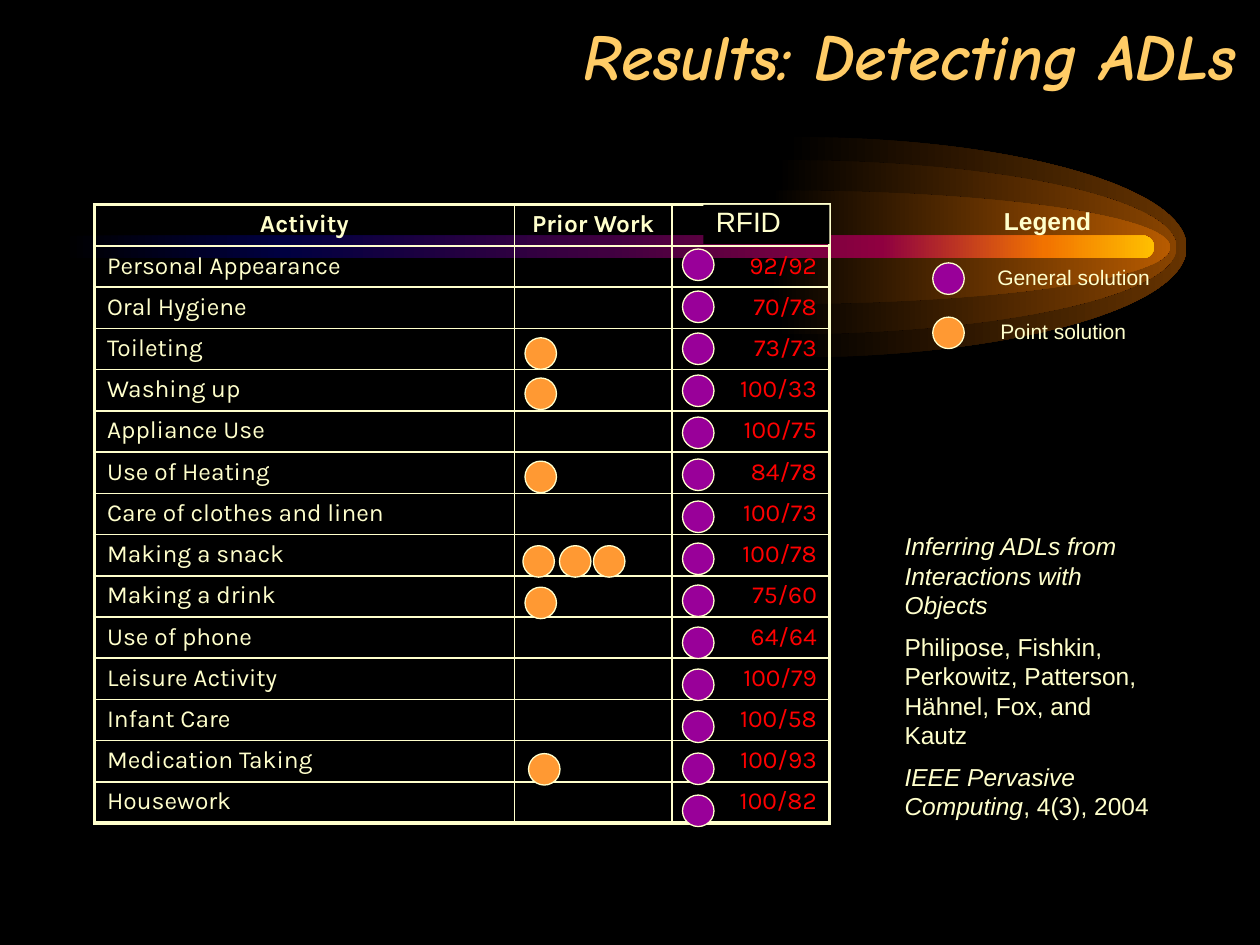
"""Build the slide of results on detecting activities of daily living."""
import dataclasses
from typing import Any, Optional

import lxml.etree
import pptx
import pptx.dml.color
import pptx.enum.shapes
import pptx.enum.text
import pptx.oxml.ns
import pptx.util

Pt = pptx.util.Pt
RGB = pptx.dml.color.RGBColor
qn = pptx.oxml.ns.qn
Align = pptx.enum.text.PP_ALIGN
Anchor = pptx.enum.text.MSO_ANCHOR
Preset = pptx.enum.shapes.MSO_SHAPE

BLACK = RGB(0x00, 0x00, 0x00)
CREAM = RGB(0xFF, 0xFF, 0xCC)
GOLD = RGB(0xFF, 0xCC, 0x66)
RED = RGB(0xFF, 0x00, 0x00)
ORANGE = RGB(0xFF, 0x99, 0x33)
PURPLE = RGB(0x99, 0x00, 0x99)
BEAM = [(0, BLACK), (20, RGB(0x00, 0x00, 0x40)), (50, RGB(0x40, 0x00, 0x40)),
        (75, RGB(0x8F, 0x00, 0x40)), (90, RGB(0xF2, 0x73, 0x00)), (100, RGB(0xFF, 0xBF, 0x00))]

DOT_SIZE = 18
DOT_PITCH = 24
FIRST_DOT_TOP = 142.3
ROW_HEIGHT = 23.58
GLOW_CENTRE_Y = 141.3
GLOW_RADIUS_X = 225.2
GLOW_TAIL = 3.6
ROUNDNESS = 0.55


@dataclasses.dataclass(frozen=True)
class Glow:
    centre_x: float
    radius_y: float
    colour: RGB


@dataclasses.dataclass(frozen=True)
class Style:
    size: float
    font: str = "Arial"
    colour: RGB = CREAM
    bold: bool = False
    italic: bool = False


@dataclasses.dataclass(frozen=True)
class Result:
    activity: str
    score: str


@dataclasses.dataclass(frozen=True)
class Box:
    left: float
    top: float
    width: float
    height: float

    def lengths(self) -> list[int]:
        return [Pt(value) for value in dataclasses.astuple(self)]


GLOWS = [Glow(452.9, 63, RGB(0x66, 0x33, 0x00)),
         Glow(447.1, 49.8, RGB(0x89, 0x44, 0x00)),
         Glow(443.5, 32.5, RGB(0xB7, 0x5B, 0x00))]
RESULTS = [
    Result("Personal Appearance", "92/92"), Result("Oral Hygiene", "70/78"),
    Result("Toileting", "73/73"), Result("Washing up", "100/33"),
    Result("Appliance Use", "100/75"), Result("Use of Heating", "84/78"),
    Result("Care of clothes and linen", "100/73"), Result("Making a snack", "100/78"),
    Result("Making a drink", "75/60"), Result("Use of phone", "64/64"),
    Result("Leisure Activity", "100/79"), Result("Infant Care", "100/58"),
    Result("Medication Taking", "100/93"), Result("Housework", "100/82"),
]
POINT_SOLUTIONS = [(300, 193), (300, 216), (300, 263.5), (298.8, 311.8),
                   (319.7, 311.8), (339.1, 311.8), (300, 335.5), (302, 430.6)]
HEADER = Style(14, "Karla", bold=True)
ACTIVITY = Style(14, "Karla")
SCORE = Style(14, "Karla", RED)
CITATION = Style(14)
WORK_TITLE = Style(14, italic=True)
LEGEND_LABEL = Style(12)


def add_run(paragraph: Any, wording: str, style: Style) -> None:
    """Append one styled run."""
    run = paragraph.add_run()
    run.text = wording
    run.font.name, run.font.size = style.font, Pt(style.size)
    run.font.bold, run.font.italic = style.bold, style.italic
    run.font.color.rgb = style.colour


def add_text(slide: Any, box: Box, paragraphs: list[list[tuple[str, Style]]],
             align: Align = Align.LEFT, anchor: Anchor = Anchor.TOP) -> None:
    """Add a wrapping text box, one list of runs per paragraph."""
    frame = slide.shapes.add_textbox(*box.lengths()).text_frame
    frame.word_wrap, frame.vertical_anchor = True, anchor
    for index, runs in enumerate(paragraphs):
        paragraph = frame.add_paragraph() if index else frame.paragraphs[0]
        paragraph.alignment = align
        paragraph.space_before = Pt(7 if index else 0)
        for wording, style in runs:
            add_run(paragraph, wording, style)


def fill_gradient(shape: Any, stops: list[tuple[int, RGB]]) -> None:
    """Give a shape a left-to-right gradient and no outline."""
    shape.shadow.inherit = False
    shape.line.fill.background()
    shape.fill.gradient()
    shape.fill.gradient_angle = 0
    stop_list = shape._element.spPr.find(".//" + qn("a:gsLst"))
    for old_stop in list(stop_list):
        stop_list.remove(old_stop)
    for percent, colour in stops:
        stop = lxml.etree.SubElement(stop_list, qn("a:gs"), pos=str(percent * 1000))
        lxml.etree.SubElement(stop, qn("a:srgbClr"), val=str(colour))


def add_glow(slide: Any, glow: Glow) -> None:
    """Add a half ellipse that fades to black on the left."""
    x, y, radius_y = glow.centre_x, GLOW_CENTRE_Y, glow.radius_y
    corners = [(x + GLOW_RADIUS_X, y), (x - GLOW_TAIL, y + radius_y), (x, y)]
    builder = slide.shapes.build_freeform(Pt(x), Pt(y - radius_y))
    builder.add_line_segments([(Pt(across), Pt(down)) for across, down in corners])
    half = builder.convert_to_shape()
    bulge_x = GLOW_TAIL + ROUNDNESS * GLOW_RADIUS_X
    right = GLOW_TAIL + GLOW_RADIUS_X
    handles = [[(bulge_x, 0), (right, (1 - ROUNDNESS) * radius_y)],
               [(right, (1 + ROUNDNESS) * radius_y), (bulge_x, 2 * radius_y)]]
    edges = list(half._element.iter(qn("a:lnTo")))
    for edge, controls in zip(edges, handles):
        edge_end = edge[0]
        curve = lxml.etree.Element(qn("a:cubicBezTo"))
        for across, down in controls:
            lxml.etree.SubElement(curve, qn("a:pt"), x=str(Pt(across)), y=str(Pt(down)))
        curve.append(edge_end)
        edge.getparent().replace(edge, curve)
    fill_gradient(half, [(0, BLACK), (100, glow.colour)])


def add_dot(slide: Any, left: float, top: float, colour: RGB) -> None:
    """Add one solution marker."""
    dot = slide.shapes.add_shape(Preset.OVAL, *Box(left, top, DOT_SIZE, DOT_SIZE).lengths())
    dot.shadow.inherit = False
    dot.fill.solid()
    dot.fill.fore_color.rgb = colour
    dot.line.color.rgb, dot.line.width = CREAM, Pt(0.75)


def set_borders(cell: Any, thick: set[str]) -> None:
    """Outline a cell, with heavier lines on the outer sides."""
    cell.fill.background()
    properties = cell._tc.get_or_add_tcPr()
    for index, side in enumerate("LRTB"):
        width = Pt(2.25 if side in thick else 1)
        line = lxml.etree.Element(qn(f"a:ln{side}"), w=str(width))
        solid = lxml.etree.SubElement(line, qn("a:solidFill"))
        lxml.etree.SubElement(solid, qn("a:srgbClr"), val=str(CREAM))
        properties.insert(index, line)


def fill_cell(cell: Any, wording: Optional[str], style: Style, align: Align) -> None:
    """Write a cell, keeping the row low when it is empty."""
    cell.margin_top = cell.margin_bottom = Pt(3.2)
    paragraph = cell.text_frame.paragraphs[0]
    paragraph.alignment = align
    if wording:
        add_run(paragraph, wording, style)
    else:
        end = lxml.etree.SubElement(paragraph._p, qn("a:endParaRPr"), sz=str(style.size * 100))
        lxml.etree.SubElement(end, qn("a:latin"), typeface=style.font)


def add_results(slide: Any) -> None:
    """Add the table of activities and scores."""
    rows = [[("Activity", HEADER, Align.CENTER), ("Prior Work", HEADER, Align.CENTER),
             (None, HEADER, Align.CENTER)]]
    rows += [[(result.activity, ACTIVITY, Align.LEFT), (None, ACTIVITY, Align.LEFT),
              (result.score, SCORE, Align.RIGHT)] for result in RESULTS]
    place = Box(54, 117, 420, ROW_HEIGHT * len(rows))
    table = slide.shapes.add_table(len(rows), 3, *place.lengths()).table
    table.first_row = table.horz_banding = False
    for column, width in zip(table.columns, (240, 90, 90)):
        column.width = Pt(width)
    for y, row in enumerate(rows):
        table.rows[y].height = Pt(ROW_HEIGHT)
        for x, (wording, style, align) in enumerate(row):
            outer = {"L": x == 0, "R": x == 2, "T": y == 0, "B": y == len(rows) - 1}
            set_borders(table.cell(y, x), {side for side, on in outer.items() if on})
            fill_cell(table.cell(y, x), wording, style, align)


def add_rfid_heading(slide: Any) -> None:
    """Add the black heading plate of the last column."""
    plate = slide.shapes.add_shape(Preset.RECTANGLE, *Box(402, 117, 72, 22.3).lengths())
    plate.shadow.inherit = False
    plate.fill.solid()
    plate.fill.fore_color.rgb = BLACK
    plate.line.fill.background()
    plate.text_frame.vertical_anchor = Anchor.TOP
    paragraph = plate.text_frame.paragraphs[0]
    paragraph.alignment, paragraph.line_spacing = Align.LEFT, 0.8
    add_run(paragraph, "RFID", Style(16))


def main() -> None:
    """Build and save the slide."""
    deck = pptx.Presentation()
    deck.slide_width, deck.slide_height = Pt(720), Pt(540)
    slide = deck.slides.add_slide(deck.slide_layouts[6])
    slide.background.fill.solid()
    slide.background.fill.fore_color.rgb = BLACK
    for glow in GLOWS:
        add_glow(slide, glow)
    beam = slide.shapes.add_shape(Preset.ROUNDED_RECTANGLE, *Box(36, 134.6, 623.5, 13).lengths())
    beam.adjustments[0] = 0.5
    fill_gradient(beam, BEAM)
    add_text(slide, Box(23, 19.4, 690.5, 37.4),
             [[("Results: Detecting ADLs", Style(37, "Comic Neue", GOLD, True, True))]],
             Align.RIGHT, Anchor.BOTTOM)
    add_results(slide)
    for index in range(len(RESULTS)):
        add_dot(slide, 390, FIRST_DOT_TOP + DOT_PITCH * index, PURPLE)
    for left, top in POINT_SOLUTIONS:
        add_dot(slide, left, top, ORANGE)
    add_text(slide, Box(566.6, 114, 83.5, 23.8), [[("Legend", Style(14, bold=True))]])
    for label, left, top, colour in (("Point solution", 564.5, 178.6, ORANGE),
                                     ("General solution", 562.8, 147.6, PURPLE)):
        add_dot(slide, 533, top + 2.6, colour)
        add_text(slide, Box(left, top, 126, 21.6), [[(label, LEGEND_LABEL)]])
    add_text(slide, Box(509.8, 300.2, 156.2, 175), [
        [("Inferring ADLs from Interactions with Objects", WORK_TITLE)],
        [("Philipose, Fishkin, Perkowitz, Patterson, Hähnel, Fox, and Kautz", CITATION)],
        [("IEEE Pervasive Computing", WORK_TITLE), (", 4(3), 2004", CITATION)]])
    add_rfid_heading(slide)
    deck.save("out.pptx")


if __name__ == "__main__":
    main()
